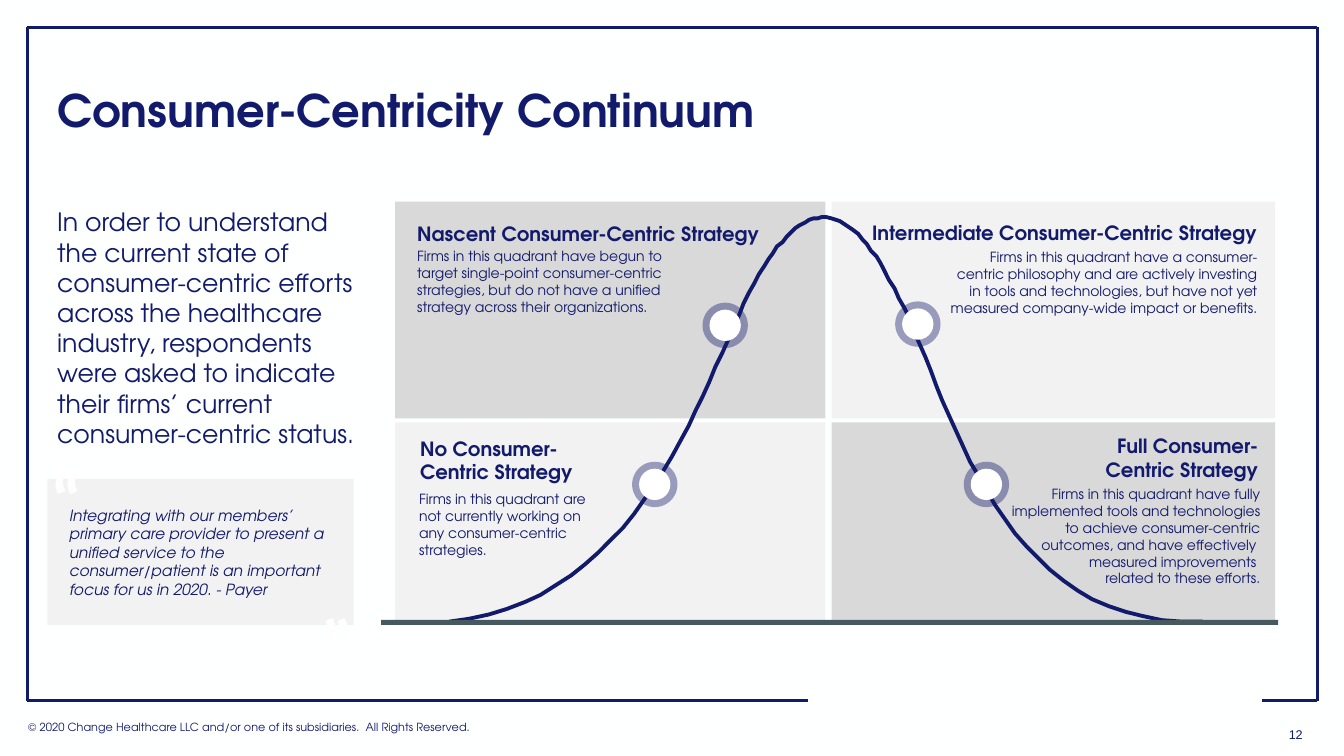
from lxml.etree import SubElement
from pptx import Presentation
from pptx.dml.color import RGBColor
from pptx.enum.shapes import MSO_CONNECTOR, MSO_SHAPE
from pptx.enum.text import MSO_ANCHOR, PP_ALIGN
from pptx.oxml import parse_xml
from pptx.oxml.ns import nsdecls, qn
from pptx.util import Pt

COLORS = {"background": "FEFFFF", "navy": "121A6C", "grey": "D9D9D9", "pale": "F2F2F2",
          "white": "FFFFFF", "slate": "465961", "quote": "FEFEFE"}
LEFT, CENTER, RIGHT = PP_ALIGN.LEFT, PP_ALIGN.CENTER, PP_ALIGN.RIGHT


def rgb(name):
    return RGBColor.from_string(COLORS[name])


class SlideBuilder:
    font = "TeX Gyre Adventor"

    def __init__(self, slide):
        self.slide = slide
        self.shapes = slide.shapes
        slide.background.fill.solid()
        slide.background.fill.fore_color.rgb = rgb("background")

    def line(self, x1, y1, x2, y2):
        line = self.shapes.add_connector(MSO_CONNECTOR.STRAIGHT, Pt(x1), Pt(y1), Pt(x2), Pt(y2))
        line.line.color.rgb = rgb("navy")
        line.line.width = Pt(2)
        SubElement(line.element.spPr, qn("a:effectLst"))

    def shape(self, kind, x, y, width, height, color, opacity=100):
        shape = self.shapes.add_shape(kind, Pt(x), Pt(y), Pt(width), Pt(height))
        shape.shadow.inherit = False
        shape.fill.solid()
        shape.fill.fore_color.rgb = rgb(color)
        shape.line.fill.background()
        if opacity < 100:
            fill = shape.element.spPr.find(qn("a:solidFill"))
            SubElement(fill[0], qn("a:alpha"), val=str(opacity * 1000))
        return shape

    def marker(self, x, y):
        for diameter, color, opacity in ((32.4, "navy", 40), (22.4, "white", 100)):
            self.shape(MSO_SHAPE.OVAL, x - diameter / 2, y - diameter / 2,
                       diameter, diameter, color, opacity)

    def curve(self, start, beziers, steps=30):
        points, origin = [], start
        for c1, c2, end in beziers:
            for t in (step / steps for step in range(1, steps + 1)):
                weights = ((1 - t) ** 3, 3 * t * (1 - t) ** 2, 3 * t * t * (1 - t), t ** 3)
                points.append([sum(w * p[axis] for w, p in zip(weights, (origin, c1, c2, end)))
                               for axis in (0, 1)])
            origin = end
        outline = self.shapes.build_freeform(start[0], start[1], scale=Pt(1))
        outline.add_line_segments(points, close=False)
        curve = outline.convert_to_shape()
        curve.shadow.inherit = False
        curve.fill.background()
        curve.line.color.rgb = rgb("navy")
        curve.line.width = Pt(2.75)

    def fill_frame(self, frame, paragraphs, size, align=LEFT, anchor=MSO_ANCHOR.TOP, wrap=True,
                   bold=False, italic=False, font=None, color="navy", spacing=None):
        frame.word_wrap = wrap
        frame.vertical_anchor = anchor
        runs = []
        for index, text in enumerate(paragraphs):
            paragraph = frame.add_paragraph() if index else frame.paragraphs[0]
            paragraph.alignment = align
            if spacing:
                paragraph.line_spacing = spacing
            for row, words in enumerate(text.split("\n")):
                if row:
                    paragraph.add_line_break()
                run = paragraph.add_run()
                run.text = words
                run.font.name = font or self.font
                run.font.size = Pt(size)
                run.font.bold = bold
                run.font.italic = italic
                run.font.color.rgb = rgb(color)
                runs.append(run)
        return runs

    def text(self, x, y, width, height, paragraphs, size, **style):
        box = self.shapes.add_textbox(Pt(x), Pt(y), Pt(width), Pt(height))
        return self.fill_frame(box.text_frame, paragraphs, size, **style)

    def quote_mark(self, x, y, mark):
        run, = self.text(x, y, 38.9, 72.7, [mark], 54, align=CENTER, wrap=False,
                         bold=True, font="Calibri", color="quote")
        properties = run._r.get_or_add_rPr()
        properties.set("spc", "50")
        properties.insert(0, parse_xml(
            f'<a:ln {nsdecls("a")} w="{Pt(0.75)}"><a:solidFill>'
            f'<a:srgbClr val="{COLORS["navy"]}"/></a:solidFill></a:ln>'))


def main():
    deck = Presentation()
    deck.slide_width, deck.slide_height = Pt(960), Pt(540)
    page = SlideBuilder(deck.slides.add_slide(deck.slide_layouts[6]))

    # Frame with a gap at the bottom right, and footer
    left, top, right, bottom = 19.4, 19.4, 941, 500.4
    for ends in ((left, bottom, 577.4, bottom), (left, top, right, top),
                 (right, top, right, bottom), (left, top, left, bottom),
                 (901.4, bottom, right, bottom)):
        page.line(*ends)
    page.text(13, 511.2, 469.4, 17.3,
              ["© 2020 Change Healthcare LLC and/or one of its subsidiaries.  All Rights Reserved."], 8)
    page.text(910.8, 509.8, 29.5, 30.2, ["12"], 9, align=CENTER,
              anchor=MSO_ANCHOR.MIDDLE, font="Arial")

    # Title and introduction
    page.text(33.8, 28.8, 892.8, 104.4, ["Consumer-Centricity Continuum"], 32,
              anchor=MSO_ANCHOR.MIDDLE, bold=True, spacing=0.9)
    page.text(33.8, 144, 227.5, 226, [
        "In order to understand the current state of consumer-centric efforts across the "
        "healthcare industry, respondents were asked to indicate their firms’ current "
        "consumer-centric status."], 18)

    # Quadrants in a checkerboard of greys
    for row, (y, height) in enumerate(((144, 154.8), (301.7, 144.7))):
        for column, (x, width) in enumerate(((282.2, 307.4), (594, 316.8))):
            page.shape(MSO_SHAPE.RECTANGLE, x, y, width, height,
                       "pale" if (row + column) % 2 else "grey")

    # Continuum curve, stage markers and baseline
    page.curve((321.1, 444.2), [
        ((468.7, 429.1), (506.9, 254.2), (542.2, 195.8)),
        ((575.3, 139.7), (605.5, 140.4), (638.6, 205.9)),
        ((675.4, 268.6), (704.9, 450.7), (859, 443.5))])
    for x, y in ((518, 232.4), (655.6, 231.5), (704.6, 346), (467.7, 346)):
        page.marker(x, y)
    page.shape(MSO_SHAPE.RECTANGLE, 272.2, 442.8, 640.8, 3.6, "slate")

    # Quadrant texts: alignment, heading box, heading, description box, description
    quadrants = [
        (LEFT, (290.9, 154.8, 265.7, 24.5), "Nascent Consumer-Centric Strategy",
         (290.9, 173.5, 208.8, 55.4),
         ["Firms in this quadrant have begun to target single-point consumer-centric "
          "strategies, but do not have a unified strategy across their organizations."]),
        (LEFT, (293, 308.2, 216.7, 41), "No Consumer-\nCentric Strategy",
         (292.3, 347, 162.7, 55.4),
         ["Firms in this quadrant are\nnot currently working on\n"
          "any consumer-centric\nstrategies."]),
        (RIGHT, (769, 306.7, 136.8, 41), "Full Consumer-Centric Strategy",
         (708.5, 343.4, 198.7, 79.9),
         ["Firms in this quadrant have fully implemented tools and technologies to achieve "
          "consumer-centric outcomes, and have effectively ",
          "measured improvements ", "related to these efforts."]),
        (RIGHT, (613.4, 154.1, 291.6, 24.5), "Intermediate Consumer-Centric Strategy",
         (670.3, 174.2, 234.7, 67.7),
         ["Firms in this quadrant have a consumer-centric philosophy and are actively "
          "investing in tools and technologies, but have not yet measured company-wide "
          "impact or benefits."]),
    ]
    for align, heading_box, heading, description_box, description in quadrants:
        page.text(*heading_box, [heading], 14, align=align, bold=True)
        page.text(*description_box, description, 10, align=align)

    # Payer quote
    quote = page.shape(MSO_SHAPE.RECTANGLE, 33.8, 342, 218.9, 104.4, "pale")
    quote.text_frame.paragraphs[0]._p.get_or_add_pPr().set("marL", str(Pt(8.64)))
    page.fill_frame(quote.text_frame, [
        "Integrating with our members’ primary care provider to present a unified service to "
        "the consumer/patient is an important focus for us in 2020. - Payer"], 11,
        anchor=MSO_ANCHOR.MIDDLE, italic=True)
    page.quote_mark(28.1, 319, "“")
    page.quote_mark(221, 423.4, "”")

    deck.save("out.pptx")


if __name__ == "__main__":
    main()
